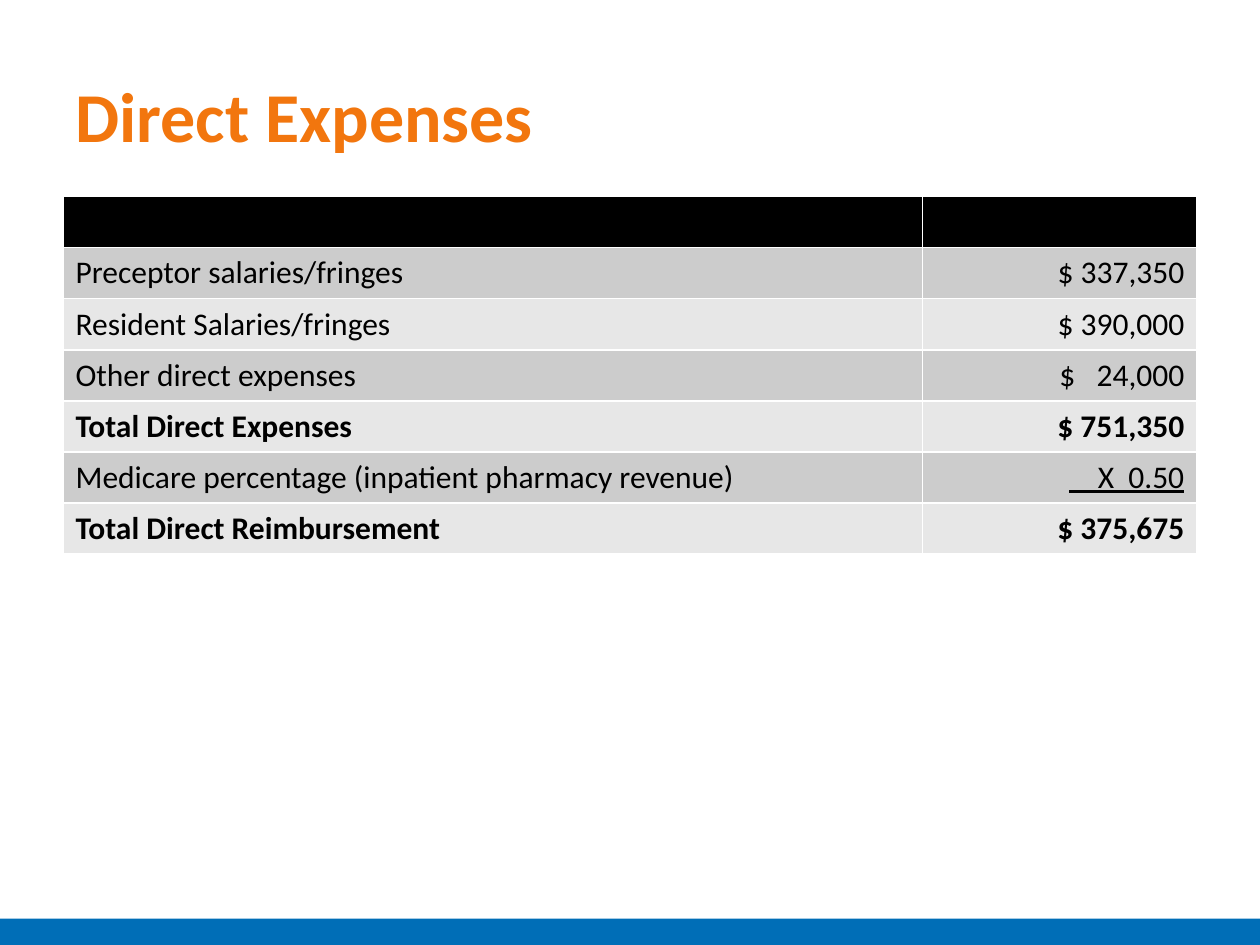
from dataclasses import dataclass

from pptx import Presentation
from pptx.dml.color import RGBColor
from pptx.enum.shapes import MSO_SHAPE
from pptx.enum.text import MSO_ANCHOR, PP_ALIGN
from pptx.util import Inches, Pt

TITLE = "Direct Expenses"
# label, amount, style
EXPENSES = [
    ("", "", "header"),
    ("Preceptor salaries/fringes", "$ 337,350", "item"),
    ("Resident Salaries/fringes", "$ 390,000", "item"),
    ("Other direct expenses", "$   24,000", "item"),
    ("Total Direct Expenses", "$ 751,350", "total"),
    ("Medicare percentage (inpatient pharmacy revenue)", "    X  0.50", "factor"),
    ("Total Direct Reimbursement", "$ 375,675", "total"),
]
COLUMN_WIDTHS = (6.82, 2.18)


@dataclass(frozen=True)
class Theme:
    font: str = "Calibri"
    title_size: int = 40
    table_size: int = 18
    title: str = "F2760E"
    text: str = "000000"
    header: str = "000000"
    bands: tuple = ("CCCCCC", "E7E7E7")
    footer: str = "006EB7"


THEME = Theme()


def fill_solid(target, color):
    target.fill.solid()
    target.fill.fore_color.rgb = RGBColor.from_string(color)


def set_font(paragraph, size, color, bold):
    font = paragraph.font
    font.name = THEME.font
    font.size = Pt(size)
    font.bold = bold
    font.color.rgb = RGBColor.from_string(color)


def add_footer_bar(slide):
    bar = slide.shapes.add_shape(
        MSO_SHAPE.RECTANGLE, Inches(0), Inches(7.29), Inches(10), Inches(0.25))
    bar.shadow.inherit = False
    fill_solid(bar, THEME.footer)
    bar.line.fill.background()


def set_title(slide):
    title = slide.shapes.title
    title.left, title.top = Inches(0.5), Inches(0.51)
    title.width, title.height = Inches(9), Inches(0.79)
    title.text_frame.text = TITLE
    title.text_frame.vertical_anchor = MSO_ANCHOR.MIDDLE
    paragraph = title.text_frame.paragraphs[0]
    paragraph.alignment = PP_ALIGN.LEFT
    set_font(paragraph, THEME.title_size, THEME.title, True)


def add_expense_table(slide):
    table = slide.shapes.add_table(
        len(EXPENSES), len(COLUMN_WIDTHS),
        Inches(0.5), Inches(1.56), Inches(9), Inches(2.84)).table
    for column, width in zip(table.columns, COLUMN_WIDTHS):
        column.width = Inches(width)
    for row_index, (label, amount, style) in enumerate(EXPENSES):
        is_header = style == "header"
        color = THEME.header if is_header else THEME.bands[(row_index - 1) % 2]
        for column_index, text in enumerate((label, amount)):
            cell = table.cell(row_index, column_index)
            fill_solid(cell, color)
            cell.text = text
            paragraph = cell.text_frame.paragraphs[0]
            set_font(paragraph, THEME.table_size, THEME.text, style == "total")
            if column_index == 1:
                paragraph.alignment = PP_ALIGN.RIGHT
                paragraph.font.underline = style == "factor"


def main():
    presentation = Presentation()
    presentation.slide_width = Inches(10)
    presentation.slide_height = Inches(7.5)
    title_only = presentation.slide_layouts[5]
    slide = presentation.slides.add_slide(title_only)
    add_footer_bar(slide)
    set_title(slide)
    add_expense_table(slide)
    presentation.save("out.pptx")


if __name__ == "__main__":
    main()
